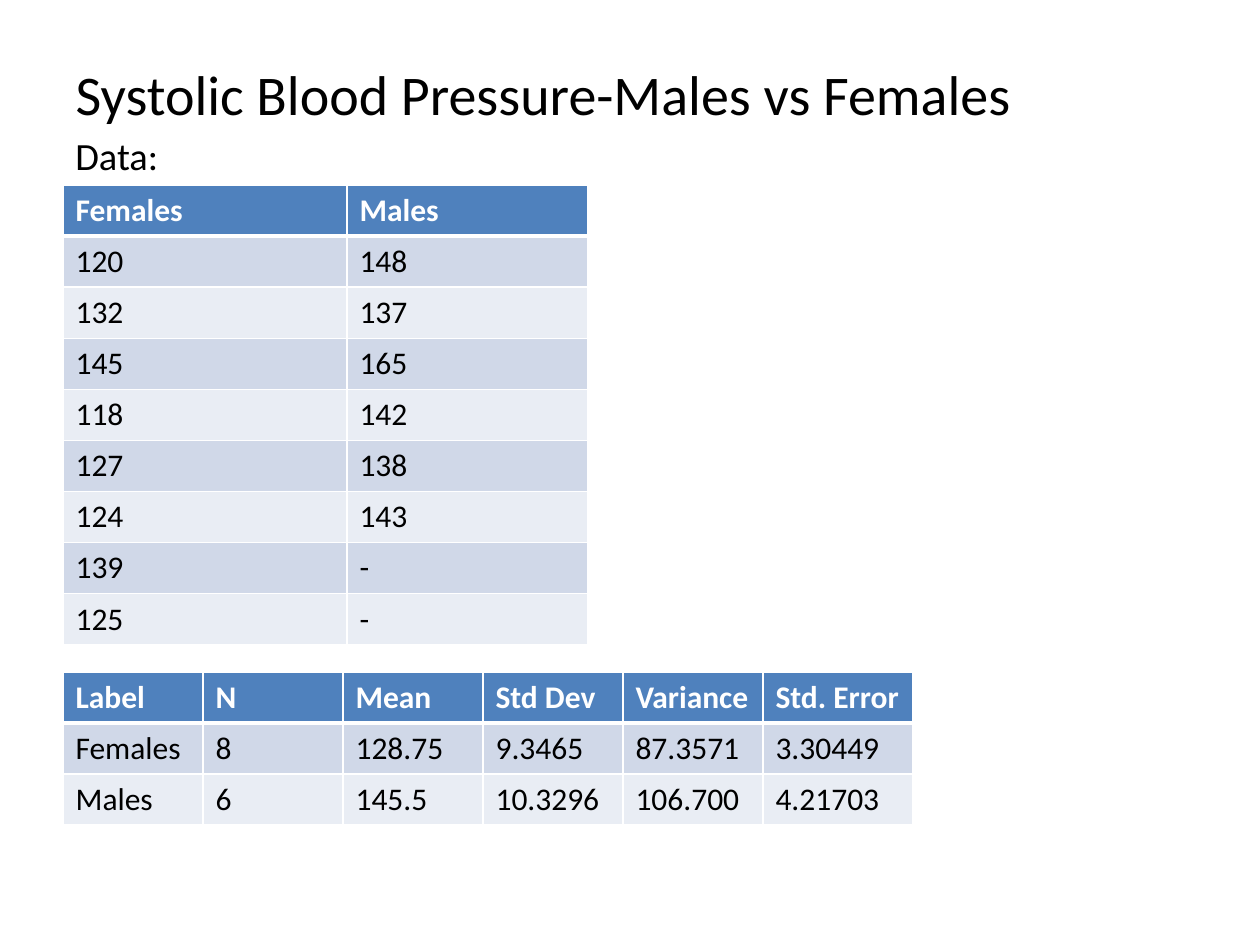
from lxml import etree
from pptx import Presentation
from pptx import util as u
from pptx.dml import color
from pptx.enum import text
from pptx.oxml import ns

PX = 914400 // 126
FONT = "Calibri"
BLACK, WHITE, HEADER = "000000", "FFFFFF", "4F81BD"
BANDS = ("D0D8E8", "E9EDF4")
LEFT, ROW_HEIGHT = 63, 51


def rgb(value):
    return color.RGBColor.from_string(value)


class SlideBuilder:
    """Holds the style and the current slide."""

    def __init__(self, deck):
        self.page = deck.slides.add_slide(deck.slide_layouts[5])

    def style(self, para, size, ink=BLACK, bold=False):
        para.alignment = text.PP_ALIGN.LEFT
        para.font.name = FONT
        para.font.size = u.Pt(size)
        para.font.bold = bold
        para.font.color.rgb = rgb(ink)

    def title(self, words, left, top, width, height, size):
        box = self.page.shapes.title
        box.left, box.top, box.width, box.height = (
            n * PX for n in (left, top, width, height))
        frame = box.text_frame
        frame.text = words
        frame.vertical_anchor = text.MSO_ANCHOR.MIDDLE
        self.style(frame.paragraphs[0], size)

    def label(self, words, left, top, width, height, size):
        box = self.page.shapes.add_textbox(
            *(n * PX for n in (left, top, width, height)))
        frame = box.text_frame
        frame.word_wrap = True
        frame.auto_size = text.MSO_AUTO_SIZE.SHAPE_TO_FIT_TEXT
        frame.text = words
        self.style(frame.paragraphs[0], size)

    def borders(self, cell, top, bottom):
        properties = cell._tc.get_or_add_tcPr()
        for side, points in (("L", 1), ("R", 1), ("T", top), ("B", bottom)):
            line = etree.SubElement(
                properties, ns.qn(f"a:ln{side}"), w=str(u.Pt(points)))
            fill = etree.SubElement(line, ns.qn("a:solidFill"))
            etree.SubElement(fill, ns.qn("a:srgbClr"), val=WHITE)

    def table(self, rows, widths, left, top, size=18):
        frame = self.page.shapes.add_table(
            len(rows), len(widths), left * PX, top * PX,
            sum(widths) * PX, len(rows) * ROW_HEIGHT * PX)
        grid = frame.table
        for column, width in zip(grid.columns, widths):
            column.width = width * PX
        for r, values in enumerate(rows):
            is_header = r == 0
            for c, value in enumerate(values):
                cell = grid.cell(r, c)
                cell.text = value
                # The rule under the header is thicker than the rest
                self.borders(cell, 3 if r == 1 else 1, 3 if is_header else 1)
                cell.fill.solid()
                cell.fill.fore_color.rgb = rgb(
                    HEADER if is_header else BANDS[(r - 1) % 2])
                self.style(cell.text_frame.paragraphs[0], size,
                           WHITE if is_header else BLACK, is_header)


def main():
    deck = Presentation()
    deck.slide_width, deck.slide_height = u.Inches(10), u.Inches(7.5)
    slide = SlideBuilder(deck)

    # Heading
    slide.title("Systolic Blood Pressure-Males vs Females",
                LEFT, 38, 1134, 110, 32)

    # Measurements
    females = ["120", "132", "145", "118", "127", "124", "139", "125"]
    males = ["148", "137", "165", "142", "138", "143", "-", "-"]
    slide.table([("Females", "Males"), *zip(females, males)],
                [284, 241], LEFT, 185)
    slide.label("Data:", LEFT, 126, 262, 59, 22)

    # Summary statistics
    slide.table([
        ("Label", "N", "Mean", "Std Dev", "Variance", "Std. Error"),
        ("Females", "8", "128.75", "9.3465", "87.3571", "3.30449"),
        ("Males", "6", "145.5", "10.3296", "106.700", "4.21703"),
    ], [140] * 5 + [150], LEFT, 672)

    deck.save("out.pptx")


if __name__ == "__main__":
    main()
